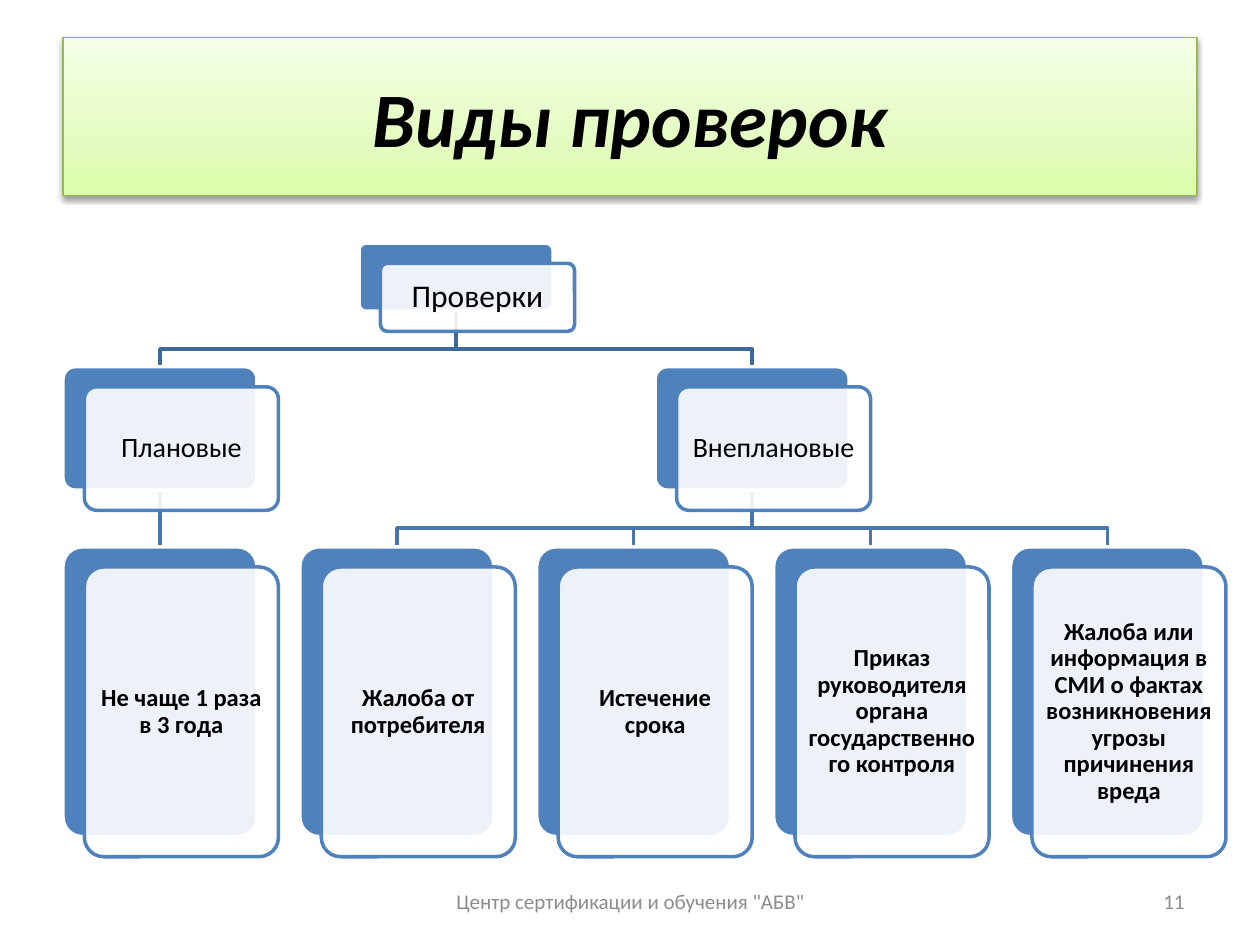
from dataclasses import dataclass

from pptx import Presentation
from pptx.dml.color import RGBColor
from pptx.enum.shapes import MSO_CONNECTOR, MSO_SHAPE
from pptx.enum.text import MSO_ANCHOR, PP_ALIGN
from pptx.oxml import parse_xml
from pptx.oxml.ns import qn
from pptx.util import Inches, Pt

DRAWING_NS = 'xmlns:a="http://schemas.openxmlformats.org/drawingml/2006/main"'
BLUE, WHITE, BLACK, GREY = "4F81BD", "FFFFFF", "000000", "8C8C8C"
LEFT, COLUMN_STEP, CARD_WIDTH = 0.5, 1.88, 1.54
FRONT_DX, FRONT_DY = 0.17, 0.16
LINK_BEND = 0.3


@dataclass(frozen=True)
class Level:
    top: float
    height: float
    text_size: int
    inset: float
    link_color: str = BLUE
    bold: bool = False


@dataclass(frozen=True)
class Node:
    text: str
    column: float
    level: Level
    children: tuple = ()

    @property
    def left(self) -> float:
        return LEFT + COLUMN_STEP * self.column

    @property
    def center(self) -> float:
        return self.left + CARD_WIDTH / 2

    @property
    def bottom(self) -> float:
        return self.level.top + self.level.height


ROOT = Level(1.93, 0.54, 18, 0.07, "3F6797")
KIND = Level(2.91, 0.98, 16, 0.07, "4875AC")
REASON = Level(4.34, 2.3, 14, 0.06, bold=True)

REASONS = [Node(text, column, REASON) for column, text in enumerate((
    "Не чаще 1 раза в 3 года",
    "Жалоба от потребителя",
    "Истечение срока",
    "Приказ руководителя органа государственного контроля",
    "Жалоба или информация в СМИ о фактах возникновения угрозы причинения вреда",
))]
PLANNED = Node("Плановые", 0, KIND, tuple(REASONS[:1]))
UNPLANNED = Node("Внеплановые", 2.5, KIND, tuple(REASONS[1:]))
INSPECTIONS = Node("Проверки", 1.25, ROOT, (PLANNED, UNPLANNED))


def rgb(color: str) -> RGBColor:
    return RGBColor.from_string(color)


def box(left: float, top: float, width: float, height: float) -> tuple:
    return tuple(Inches(value) for value in (left, top, width, height))


def write(shape, text: str, size: int, color: str = BLACK, align=PP_ALIGN.CENTER,
          bold: bool = False, italic: bool = False):
    """Put one centred-in-height paragraph into a shape and return it."""
    frame = shape.text_frame
    frame.text = text
    frame.word_wrap = True
    frame.vertical_anchor = MSO_ANCHOR.MIDDLE
    paragraph = frame.paragraphs[0]
    paragraph.alignment = align
    font = paragraph.runs[0].font
    font.name, font.size, font.bold, font.italic = "Calibri", Pt(size), bold, italic
    font.color.rgb = rgb(color)
    return paragraph


def draw_title(slide, text: str) -> None:
    title = slide.shapes.add_shape(MSO_SHAPE.RECTANGLE, *box(0.5, 0.3, 9, 1.25))
    title.line.color.rgb = rgb("98B955")
    title.line.width = Pt(0.75)
    stops = "".join(
        f'<a:gs pos="{percent * 1000}"><a:srgbClr val="{color}"/></a:gs>'
        for percent, color in ((0, "DAFDA7"), (35, "E4FCC2"), (100, "F5FFE7")))
    properties = title._element.spPr
    properties.find(qn("a:prstGeom")).addnext(parse_xml(
        f'<a:gradFill {DRAWING_NS} rotWithShape="1"><a:gsLst>{stops}</a:gsLst>'
        '<a:lin ang="16200000" scaled="1"/></a:gradFill>'))
    properties.find(qn("a:ln")).addnext(parse_xml(
        f'<a:effectLst {DRAWING_NS}><a:outerShdw blurRad="{Pt(3.1)}" dist="{Pt(1.6)}" '
        'dir="5400000" rotWithShape="0"><a:srgbClr val="000000"><a:alpha val="38000"/>'
        '</a:srgbClr></a:outerShdw></a:effectLst>'))
    write(title, text, 44, bold=True, italic=True)


def draw_card(slide, left: float, top: float, height: float, fill: str, line: str):
    card = slide.shapes.add_shape(MSO_SHAPE.ROUNDED_RECTANGLE,
                                  *box(left, top, CARD_WIDTH, height))
    card.adjustments[0] = 0.1
    card.shadow.inherit = False
    card.fill.solid()
    card.fill.fore_color.rgb = rgb(fill)
    card.line.color.rgb = rgb(line)
    card.line.width = Pt(2)
    return card


def draw_node(slide, node: Node):
    """Draw the blue card and the translucent text card; return the blue one."""
    level = node.level
    back = draw_card(slide, node.left, level.top, level.height, BLUE, WHITE)
    front = draw_card(slide, node.left + FRONT_DX, level.top + FRONT_DY,
                      level.height, WHITE, BLUE)
    front_color = front._element.spPr.find(qn("a:solidFill"))[0]
    front_color.append(parse_xml(f'<a:alpha {DRAWING_NS} val="90000"/>'))
    write(front, node.text, level.text_size, bold=level.bold).line_spacing = 0.9
    frame = front.text_frame
    frame.margin_left = frame.margin_right = Inches(level.inset)
    frame.margin_top = frame.margin_bottom = Inches(level.inset)
    return back


def draw_link(slide, parent: Node, child: Node, parent_card, child_card) -> None:
    """Link two cards, straight or with a bend, behind everything drawn so far."""
    start = Inches(parent.center), Inches(parent.bottom)
    end = Inches(child.center), Inches(child.level.top)
    if parent.column == child.column:
        link = slide.shapes.add_connector(MSO_CONNECTOR.STRAIGHT, *start, *end)
        link.begin_connect(parent_card, 2)
        link.end_connect(child_card, 0)
        link._element.spPr.append(parse_xml(f"<a:effectLst {DRAWING_NS}/>"))
    else:
        bend = Inches(parent.bottom + LINK_BEND)
        builder = slide.shapes.build_freeform(*start)
        builder.add_line_segments([(start[0], bend), (end[0], bend), end], close=False)
        link = builder.convert_to_shape()
        link.fill.background()
        link.shadow.inherit = False
    link.line.color.rgb = rgb(parent.level.link_color)
    link.line.width = Pt(2)
    slide.shapes._spTree.insert(2, link._element)


def draw_tree(slide, node: Node):
    card = draw_node(slide, node)
    for child in node.children:
        draw_link(slide, node, child, card, draw_tree(slide, child))
    return card


def draw_footer(slide, left: float, width: float, text: str, align) -> None:
    footer = slide.shapes.add_textbox(*box(left, 6.95, width, 0.4))
    write(footer, text, 12, GREY, align)


def main() -> None:
    presentation = Presentation()
    presentation.slide_width, presentation.slide_height = Inches(10), Inches(7.5)
    slide = presentation.slides.add_slide(presentation.slide_layouts[6])
    draw_title(slide, "Виды проверок")
    draw_tree(slide, INSPECTIONS)
    draw_footer(slide, 3.42, 3.17, 'Центр сертификации и обучения "АБВ"', PP_ALIGN.CENTER)
    draw_footer(slide, 7.17, 2.33, "11", PP_ALIGN.RIGHT)
    presentation.save("out.pptx")


if __name__ == "__main__":
    main()
